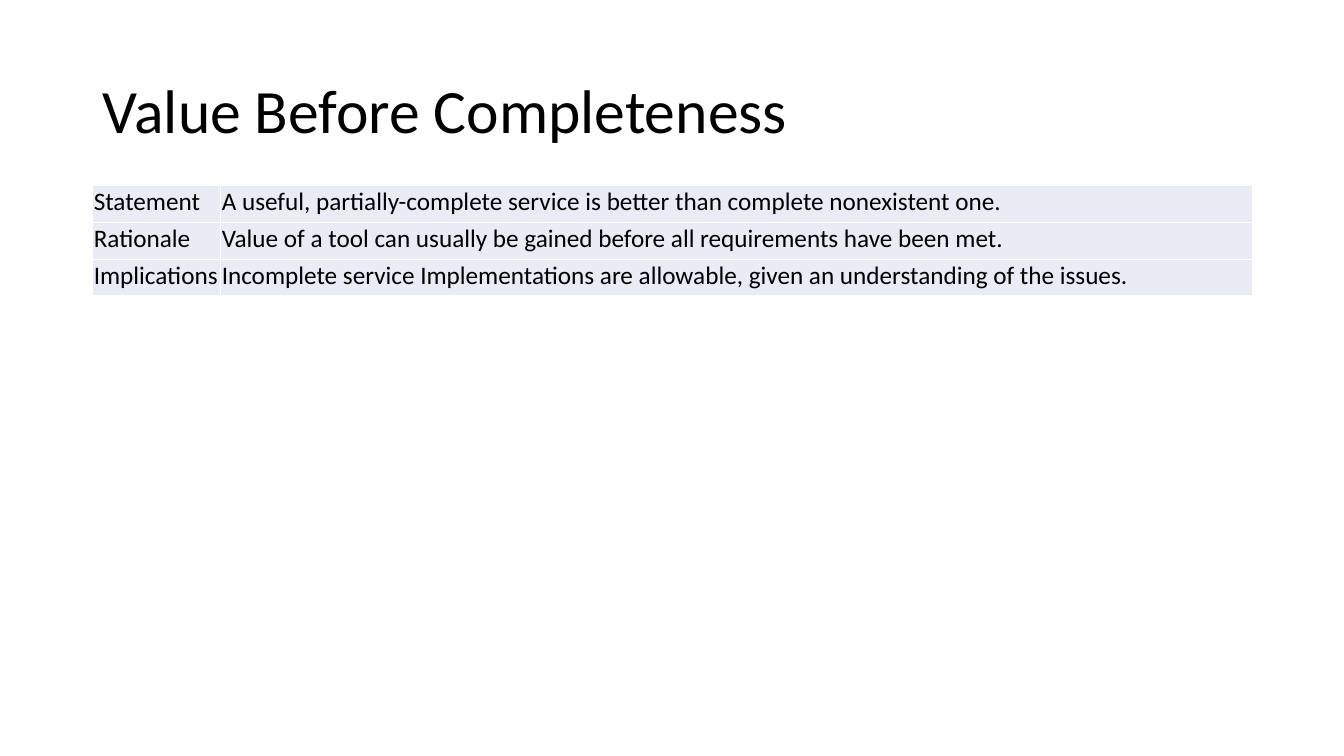
from typing import NamedTuple

from lxml import etree
from pptx import Presentation
from pptx.dml.color import RGBColor
from pptx.enum.text import MSO_ANCHOR, MSO_AUTO_SIZE, PP_ALIGN
from pptx.oxml.ns import qn
from pptx.slide import Slide
from pptx.table import _Cell
from pptx.text.text import _Paragraph
from pptx.util import Inches, Pt

BLACK = RGBColor(0x00, 0x00, 0x00)
WHITE = RGBColor(0xFF, 0xFF, 0xFF)
PALE_BLUE = RGBColor(0xE9, 0xEB, 0xF5)
MIDDLE = MSO_ANCHOR.MIDDLE
LEFT = PP_ALIGN.LEFT
NO_AUTOFIT = MSO_AUTO_SIZE.NONE
TITLE_ONLY_LAYOUT = 5
FONT_NAME = "Calibri"
MARGIN = Inches(0.92)
CONTENT_WIDTH = Inches(11.5)
COLUMN_WIDTHS = (Inches(1.27), Inches(10.23))
ROW_HEIGHT = Inches(0.36)


class PrincipleRow(NamedTuple):
    label: str
    description: str


PRINCIPLE_ROWS = (
    PrincipleRow("Statement", "A useful, partially-complete service is better than complete nonexistent one."),
    PrincipleRow("Rationale", "Value of a tool can usually be gained before all requirements have been met."),
    PrincipleRow(
        "Implications",
        "Incomplete service Implementations are allowable, given an understanding of the issues.",
    ),
)


def format_paragraph(paragraph: _Paragraph, size: int) -> None:
    paragraph.alignment = LEFT
    for run in paragraph.runs:
        run.font.name = FONT_NAME
        run.font.size = Pt(size)
        run.font.color.rgb = BLACK


def add_title(slide: Slide, text: str) -> None:
    title = slide.shapes.title
    title.left, title.top = MARGIN, Inches(0.4)
    title.width, title.height = CONTENT_WIDTH, Inches(1.45)
    text_frame = title.text_frame
    text_frame.text = text
    text_frame.word_wrap = True
    text_frame.auto_size = NO_AUTOFIT
    text_frame.vertical_anchor = MIDDLE
    paragraph = text_frame.paragraphs[0]
    paragraph.line_spacing = 0.9
    format_paragraph(paragraph, 44)


def add_borders(cell: _Cell) -> None:
    """Draw a thin white line on each side; lines must precede the fill."""
    properties = cell._tc.get_or_add_tcPr()
    for index, side in enumerate(("a:lnL", "a:lnR", "a:lnT", "a:lnB")):
        line = etree.Element(qn(side), w=str(Pt(1)))
        fill = etree.SubElement(line, qn("a:solidFill"))
        etree.SubElement(fill, qn("a:srgbClr"), val=str(WHITE))
        properties.insert(index, line)


def fill_cell(cell: _Cell, text: str) -> None:
    cell.text_frame.text = text
    cell.vertical_anchor = MIDDLE
    cell.margin_left = cell.margin_top = cell.margin_right = Inches(0.01)
    cell.margin_bottom = Inches(0.05)
    cell.fill.solid()
    cell.fill.fore_color.rgb = PALE_BLUE
    add_borders(cell)
    format_paragraph(cell.text_frame.paragraphs[0], 18)


def add_principle_table(slide: Slide) -> None:
    row_count = len(PRINCIPLE_ROWS)
    table = slide.shapes.add_table(
        row_count, len(COLUMN_WIDTHS), MARGIN, Inches(1.84), CONTENT_WIDTH, ROW_HEIGHT * row_count
    ).table
    table.first_row = False
    table.horz_banding = False
    for column, width in zip(table.columns, COLUMN_WIDTHS):
        column.width = width
    for row, principle_row in zip(table.rows, PRINCIPLE_ROWS):
        row.height = ROW_HEIGHT
        for cell, text in zip(row.cells, principle_row):
            fill_cell(cell, text)


def main() -> None:
    presentation = Presentation()
    presentation.slide_width = Inches(13.33)
    presentation.slide_height = Inches(7.5)
    slide = presentation.slides.add_slide(presentation.slide_layouts[TITLE_ONLY_LAYOUT])
    add_title(slide, "Value Before Completeness")
    add_principle_table(slide)
    presentation.save("out.pptx")


if __name__ == "__main__":
    main()
